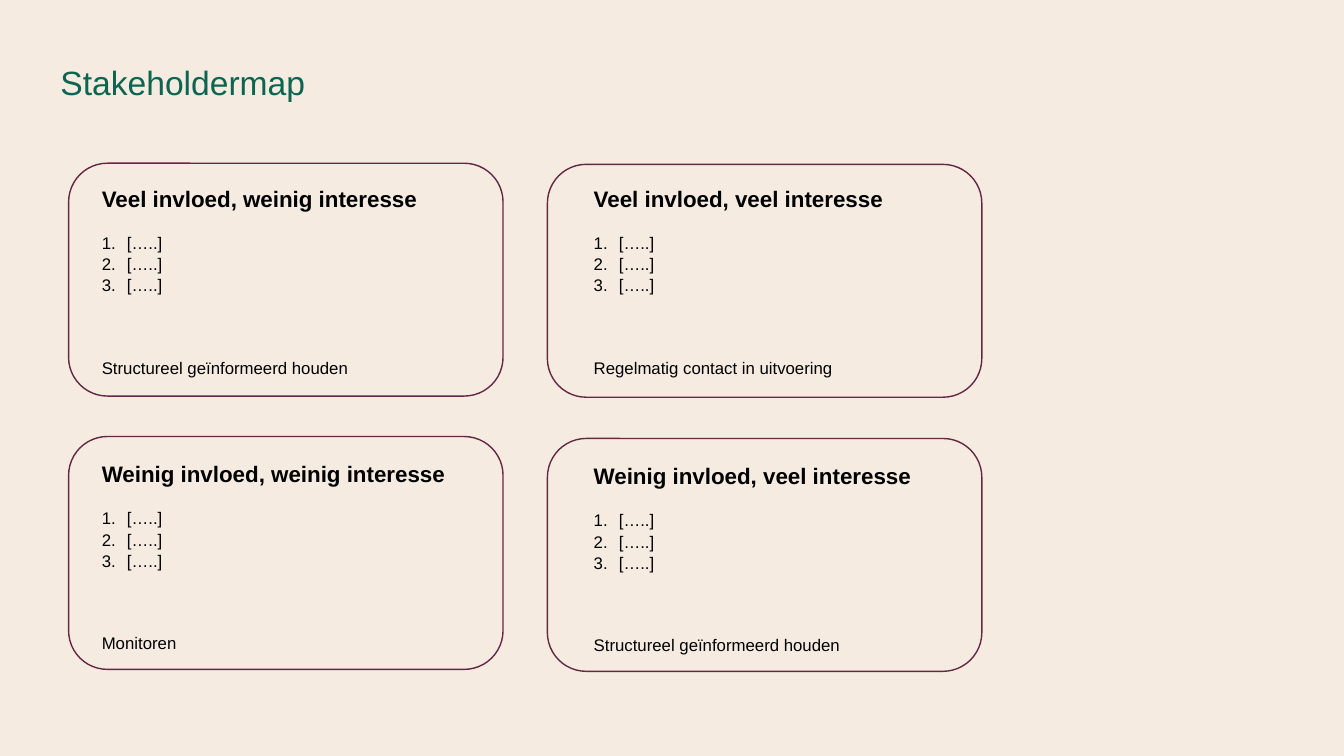
from pptx import Presentation, util as u
from pptx.dml.color import RGBColor
from pptx.enum import shapes, text
from pptx.oxml.ns import qn
from lxml import etree

CARD_SIZE = (310.3, 166.3)
TEXT_SIZE = (277.2, 164.9)
BLANK_LINE = 14.5
ITEMS = ["[…..]"] * 3

# Card corner, text corner, heading, advice
QUADRANTS = [
    ((49, 116.6), (65.5, 127.4), "Veel invloed, weinig interesse",
     "Structureel geïnformeerd houden"),
    ((391, 117.4), (416.9, 127.4), "Veel invloed, veel interesse",
     "Regelmatig contact in uitvoering"),
    ((49, 311.8), (65.5, 324), "Weinig invloed, weinig interesse",
     "Monitoren"),
    ((391, 313.2), (416.9, 325.4), "Weinig invloed, veel interesse",
     "Structureel geïnformeerd houden"),
]


def colour(value):
    return RGBColor.from_string(value)


def write(paragraph, content, size=12, color="000000", bold=False,
          before=0, numbered=False):
    """Fill a paragraph with one formatted run."""
    paragraph.alignment = text.PP_ALIGN.LEFT
    paragraph.line_spacing = 1.05
    paragraph.space_before = u.Pt(before)
    paragraph.space_after = u.Pt(0)
    run = paragraph.add_run()
    run.text = content
    run.font.name = "Arial"
    run.font.size = u.Pt(size)
    run.font.bold = bold
    run.font.color.rgb = colour(color)

    # Numbering and hanging indent
    properties = paragraph._p.get_or_add_pPr()
    indent = u.Pt(18) if numbered else 0
    properties.set("marL", str(indent))
    properties.set("indent", str(-indent))
    if numbered:
        etree.SubElement(properties, qn("a:buAutoNum"), type="arabicPeriod")
    else:
        etree.SubElement(properties, qn("a:buNone"))


class StakeholderSlide:
    background = "F5EBE1"
    outline = "642744"
    title_color = "0B6551"

    def __init__(self, presentation):
        # The comparison layout has a title and four body placeholders
        self.slide = presentation.slides.add_slide(presentation.slide_layouts[4])
        fill = self.slide.background.fill
        fill.solid()
        fill.fore_color.rgb = colour(self.background)

    def place(self, placeholder, corner, size):
        placeholder.left, placeholder.top = map(u.Pt, corner)
        placeholder.width, placeholder.height = map(u.Pt, size)
        frame = placeholder.text_frame
        frame.word_wrap = True
        frame.auto_size = text.MSO_AUTO_SIZE.NONE
        frame.vertical_anchor = text.MSO_ANCHOR.TOP
        return frame

    def title(self, content, corner, size):
        frame = self.place(self.slide.shapes.title, corner, size)
        write(frame.paragraphs[0], content, size=24, color=self.title_color)

    def card(self, corner):
        shape = self.slide.shapes.add_shape(
            shapes.MSO_SHAPE.ROUNDED_RECTANGLE, *map(u.Pt, corner + CARD_SIZE))
        shape.shadow.inherit = False
        shape.fill.solid()
        shape.fill.fore_color.rgb = colour(self.background)
        shape.line.color.rgb = colour(self.outline)
        shape.line.width = u.Pt(1)

    def body(self, placeholder, corner, heading, advice):
        frame = self.place(placeholder, corner, TEXT_SIZE)
        write(frame.paragraphs[0], heading, size=16, bold=True)
        for number, item in enumerate(ITEMS):
            write(frame.add_paragraph(), item, numbered=True,
                  before=0 if number else BLANK_LINE)
        write(frame.add_paragraph(), advice, before=3 * BLANK_LINE)
        # Bring the text in front of its card
        tree = placeholder.element.getparent()
        tree.append(placeholder.element)


def main():
    presentation = Presentation()
    presentation.slide_width = u.Pt(960)
    presentation.slide_height = u.Pt(540)
    page = StakeholderSlide(presentation)

    # Title
    page.title("Stakeholdermap", (36, 38.9), (803.5, 36))

    # Four quadrants
    bodies = list(page.slide.placeholders)[1:]
    for placeholder, quadrant in zip(bodies, QUADRANTS):
        card_corner, text_corner, heading, advice = quadrant
        page.card(card_corner)
        page.body(placeholder, text_corner, heading, advice)

    presentation.save("out.pptx")


if __name__ == "__main__":
    main()
